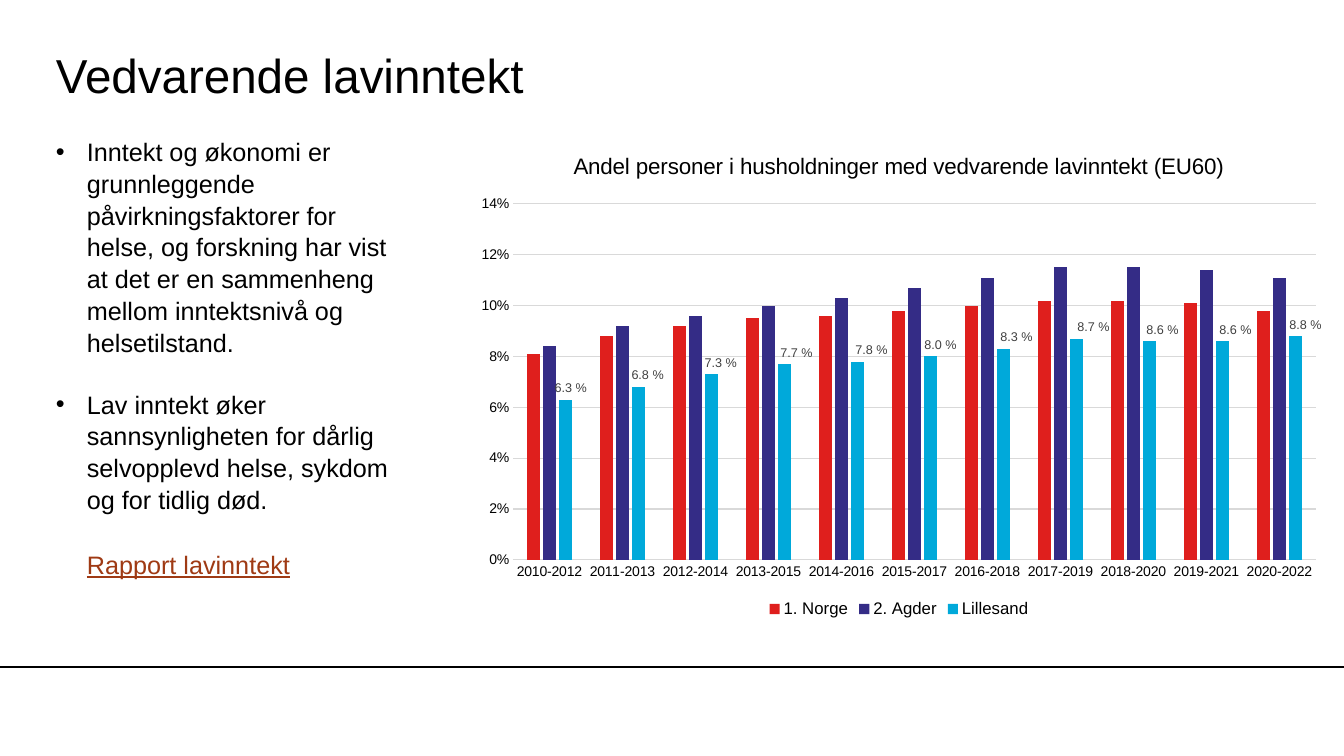
import pptx
import pptx.chart.data
import pptx.dml.color
import pptx.enum.chart
import pptx.enum.shapes
import pptx.enum.text
import pptx.oxml
import pptx.oxml.ns
import pptx.util
from lxml import etree

PX = 914400 / 100.8
PAGE_WIDTH, PAGE_HEIGHT = 1344, 756
BLACK, GRID = "000000", "D9D9D9"

BULLETS = [
    "Inntekt og økonomi er grunnleggende påvirkningsfaktorer for helse, og forskning har vist "
    "at det er en sammenheng mellom inntektsnivå og helsetilstand.",
    "Lav inntekt øker sannsynligheten for dårlig selvopplevd helse, sykdom og for tidlig død.",
]
CHART_TITLE = "Andel personer i husholdninger med vedvarende lavinntekt (EU60)"
PERIODS = [f"{year}-{year + 2}" for year in range(2010, 2021)]
SERIES = [
    ("1. Norge", "DF1F1D",
     [0.081, 0.088, 0.092, 0.095, 0.096, 0.098, 0.1, 0.102, 0.102, 0.101, 0.098]),
    ("2. Agder", "342C86",
     [0.084, 0.092, 0.096, 0.1, 0.103, 0.107, 0.111, 0.115, 0.115, 0.114, 0.111]),
    ("Lillesand", "00A9DA",
     [0.063, 0.068, 0.073, 0.077, 0.078, 0.08, 0.083, 0.087, 0.086, 0.086, 0.088]),
]
LABEL_SHIFTS = [5, 9, 9, 12, 14, 10, 13, 17, 13, 13, 10]


def px(*lengths):
    return [pptx.util.Emu(round(length * PX)) for length in lengths]


def rgb(value):
    return pptx.dml.color.RGBColor.from_string(value)


def set_font(font, size, color=BLACK):
    font.name = "Arial"
    font.size = pptx.util.Pt(size)
    font.bold = False
    font.color.rgb = rgb(color)


def set_line(line, color):
    line.color.rgb = rgb(color)
    line.width = pptx.util.Pt(0.75)


def add_title(page, box):
    title = page.shapes.title
    title.left, title.top, title.width, title.height = px(*box)
    frame = title.text_frame
    frame.text = "Vedvarende lavinntekt"
    frame.margin_left = frame.margin_right = frame.margin_top = frame.margin_bottom = 0
    frame.vertical_anchor = pptx.enum.text.MSO_ANCHOR.MIDDLE
    para = frame.paragraphs[0]
    para.alignment = pptx.enum.text.PP_ALIGN.LEFT
    set_font(para.font, 34)


def add_bullets(page, box):
    frame = page.shapes.add_textbox(*px(*box)).text_frame
    frame.word_wrap = True
    indent = px(31)[0]
    for index, text in enumerate(BULLETS):
        para = frame.paragraphs[0] if index == 0 else frame.add_paragraph()
        para.text = text
        para.line_spacing = 1.05
        if index:
            para.space_before = pptx.util.Pt(21.6)
        properties = para._p.get_or_add_pPr()
        properties.set("marL", str(indent))
        properties.set("indent", str(-indent))
        etree.SubElement(properties, pptx.oxml.ns.qn("a:buFont"), typeface="Arial")
        etree.SubElement(properties, pptx.oxml.ns.qn("a:buChar"), char="•")
        set_font(para.font, 18)


def add_report_link(page, box):
    frame = page.shapes.add_textbox(*px(*box)).text_frame
    frame.word_wrap = True
    para = frame.paragraphs[0]
    para.text = "Rapport lavinntekt"
    set_font(para.font, 18, "9F3A14")
    para.font.underline = True


def manual_layout(target=None, **values):
    """Return a chart layout element; values are fractions of the chart."""
    parts = [f'<c:layoutTarget val="{target}"/>'] if target else []
    if target:
        parts += ['<c:xMode val="edge"/>', '<c:yMode val="edge"/>']
    parts += [f'<c:{name} val="{value:.4f}"/>' for name, value in values.items()]
    return pptx.oxml.parse_xml(
        f'<c:layout {pptx.oxml.ns.nsdecls("c")}><c:manualLayout>'
        f'{"".join(parts)}</c:manualLayout></c:layout>')


def label_columns(series, chart_width):
    """Show values above the columns, each moved right by its own shift."""
    outside = pptx.enum.chart.XL_LABEL_POSITION.OUTSIDE_END
    labels = series.data_labels
    labels.show_value = True
    labels.number_format = "0.0\\ %"
    labels.number_format_is_linked = False
    labels.position = outside
    set_font(labels.font, 9, "404040")
    for index, shift in enumerate(LABEL_SHIFTS):
        label = series.points[index].data_label
        label.position = outside
        set_font(label.font, 9, "404040")
    for element, shift in zip(labels._element.findall(pptx.oxml.ns.qn("c:dLbl")), LABEL_SHIFTS):
        element.insert(1, manual_layout(x=shift / chart_width, y=0))


def format_axes(chart):
    for axis in (chart.category_axis, chart.value_axis):
        axis.major_tick_mark = axis.minor_tick_mark = pptx.enum.chart.XL_TICK_MARK.NONE
        set_font(axis.tick_labels.font, 10)
    set_line(chart.category_axis.format.line, GRID)
    values = chart.value_axis
    values.minimum_scale, values.maximum_scale, values.major_unit = 0, 0.14, 0.02
    values.tick_labels.number_format = "0%"
    values.tick_labels.number_format_is_linked = False
    values.format.line.fill.background()
    values.has_major_gridlines = True
    set_line(values.major_gridlines.format.line, GRID)


def add_income_chart(page, box):
    width, height = box[2:]
    data = pptx.chart.data.CategoryChartData(number_format="0.0%")
    data.categories = PERIODS
    for name, color, values in SERIES:
        data.add_series(name, values)
    kind = pptx.enum.chart.XL_CHART_TYPE.COLUMN_CLUSTERED
    chart = page.shapes.add_chart(kind, *px(*box), data).chart
    set_font(chart.font, 10)

    chart.has_title = True
    chart.chart_title.include_in_layout = False
    para = chart.chart_title.text_frame.paragraphs[0]
    para.text = CHART_TITLE
    set_font(para.font, 16)

    chart.has_legend = True
    chart.legend.position = pptx.enum.chart.XL_LEGEND_POSITION.BOTTOM
    chart.legend.include_in_layout = False
    set_font(chart.legend.font, 12)

    format_axes(chart)
    plot = chart.plots[0]
    plot.vary_by_categories = False
    plot.gap_width, plot.overlap = 219, -27
    for series, (name, color, values) in zip(plot.series, SERIES):
        series.format.fill.solid()
        series.format.fill.fore_color.rgb = rgb(color)
    label_columns(plot.series[-1], width)

    area = chart._chartSpace.find(".//" + pptx.oxml.ns.qn("c:plotArea"))
    for layout in area.findall(pptx.oxml.ns.qn("c:layout")):
        area.remove(layout)
    area.insert(0, manual_layout("inner", x=48 / width, y=71 / height,
                                 w=803 / width, h=356 / height))


def add_footer_line(page, top):
    straight = pptx.enum.shapes.MSO_CONNECTOR.STRAIGHT
    line = page.shapes.add_connector(straight, *px(0, top, PAGE_WIDTH, top))
    set_line(line.line, BLACK)
    etree.SubElement(line._element.spPr, pptx.oxml.ns.qn("a:effectLst"))


def main():
    deck = pptx.Presentation()
    deck.slide_width, deck.slide_height = px(PAGE_WIDTH, PAGE_HEIGHT)
    page = deck.slides.add_slide(deck.slide_layouts[5])
    add_footer_line(page, 667)
    add_title(page, (56, 36, 1119, 76))
    add_bullets(page, (46, 130, 353, 377))
    add_report_link(page, (77, 544, 267, 40))
    add_income_chart(page, (465, 133, 868, 489))
    deck.save("out.pptx")


if __name__ == "__main__":
    main()
